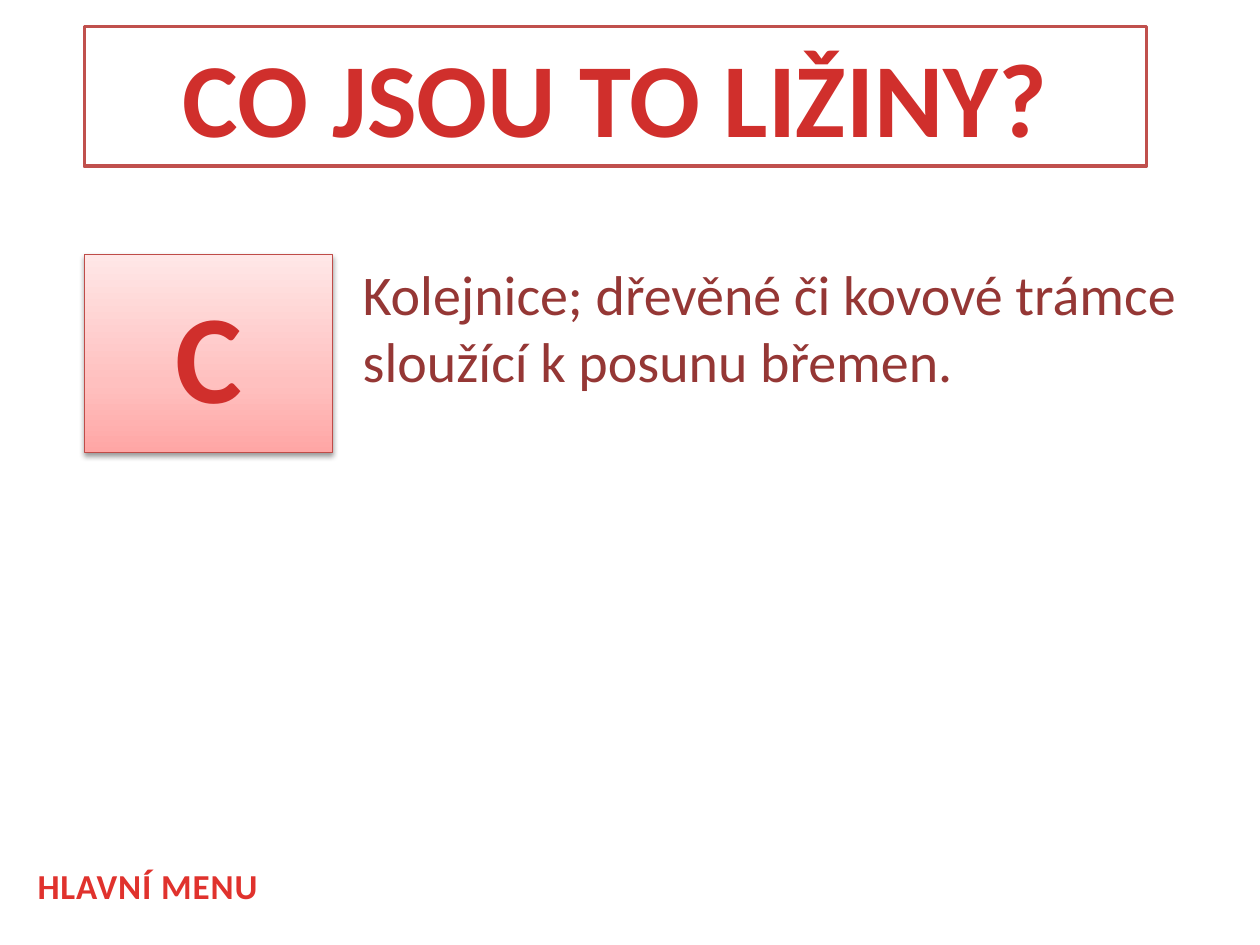
from pptx import Presentation
from pptx.dml.color import RGBColor
from pptx.enum.shapes import MSO_SHAPE
from pptx.enum.text import MSO_ANCHOR, PP_ALIGN
from pptx.oxml import parse_xml
from pptx.oxml.ns import nsdecls
from pptx.util import Inches, Pt

WHITE = RGBColor(0xFF, 0xFF, 0xFF)
RED = RGBColor(0xD0, 0x2F, 0x2C)
BRIGHT = RGBColor(0xE0, 0x32, 0x2D)
DARK = RGBColor(0x95, 0x37, 0x35)
FRAME = RGBColor(0xC0, 0x50, 0x4D)
EDGE = RGBColor(0xBF, 0x4C, 0x48)
STOPS = [(0, RGBColor(0xFF, 0xA6, 0xA5)),
         (35, RGBColor(0xFF, 0xC0, 0xBF)),
         (100, RGBColor(0xFF, 0xE7, 0xE7))]

deck = Presentation()
deck.slide_width, deck.slide_height = Inches(10), Inches(7.5)
slide = deck.slides.add_slide(deck.slide_layouts[6])

# Grid of 100 columns by 75 rows
COL = deck.slide_width / 100
ROW = deck.slide_height / 75
LEFT = 6.7


def place(x, y, w, h):
    return int(x * COL), int(y * ROW), int(w * COL), int(h * ROW)


def write(shape, text, size, color, bold=True, align=PP_ALIGN.LEFT):
    frame = shape.text_frame
    frame.word_wrap = True
    para = frame.paragraphs[0]
    para.alignment = align
    run = para.add_run()
    run.text = text
    font = run.font
    font.name, font.size, font.bold = "Calibri", Pt(size), bold
    font.color.rgb = color
    return run


# Framed title
title = slide.shapes.add_shape(MSO_SHAPE.RECTANGLE, *place(LEFT, 2.1, 84.3, 11.1))
title.shadow.inherit = False
title.fill.solid()
title.fill.fore_color.rgb = WHITE
title.line.color.rgb = FRAME
title.line.width = Pt(2)
title.text_frame.vertical_anchor = MSO_ANCHOR.TOP
write(title, "CO JSOU TO LIŽINY?", 60, RED, align=PP_ALIGN.CENTER)

# Letter tile with a gradient and a soft shadow
tile = slide.shapes.add_shape(MSO_SHAPE.RECTANGLE, *place(LEFT, 20.2, 19.7, 15.7))
tile.shadow.inherit = False
tile.line.color.rgb = EDGE
tile.line.width = Pt(0.75)
tile.text_frame.vertical_anchor = MSO_ANCHOR.MIDDLE
write(tile, "C", 72, RED, align=PP_ALIGN.CENTER)

stops = "".join(f'<a:gs pos="{pos * 1000}"><a:srgbClr val="{tone}"/></a:gs>'
                for pos, tone in STOPS)
props = tile._element.spPr
props.insert(2, parse_xml(
    f'<a:gradFill {nsdecls("a")} rotWithShape="1"><a:gsLst>{stops}</a:gsLst>'
    '<a:lin ang="16200000" scaled="0"/></a:gradFill>'))
props.find("{*}effectLst").append(parse_xml(
    f'<a:outerShdw {nsdecls("a")} blurRad="{Pt(3.1)}" dist="{Pt(1.6)}" '
    'dir="5400000" rotWithShape="0"><a:srgbClr val="000000">'
    '<a:alpha val="38000"/></a:srgbClr></a:outerShdw>'))

# Answer
answer = slide.shapes.add_textbox(*place(27.8, 20.1, 70.1, 11.8))
write(answer, "Kolejnice; dřevěné či kovové trámce sloužící k posunu břemen.",
      32, DARK, bold=False)

# Menu label, slightly spaced letters
menu = slide.shapes.add_textbox(*place(2, 68.1, 28.7, 4.4))
label = write(menu, "HLAVNÍ MENU", 20, BRIGHT)
label.font._element.set("spc", "50")

deck.save("out.pptx")
